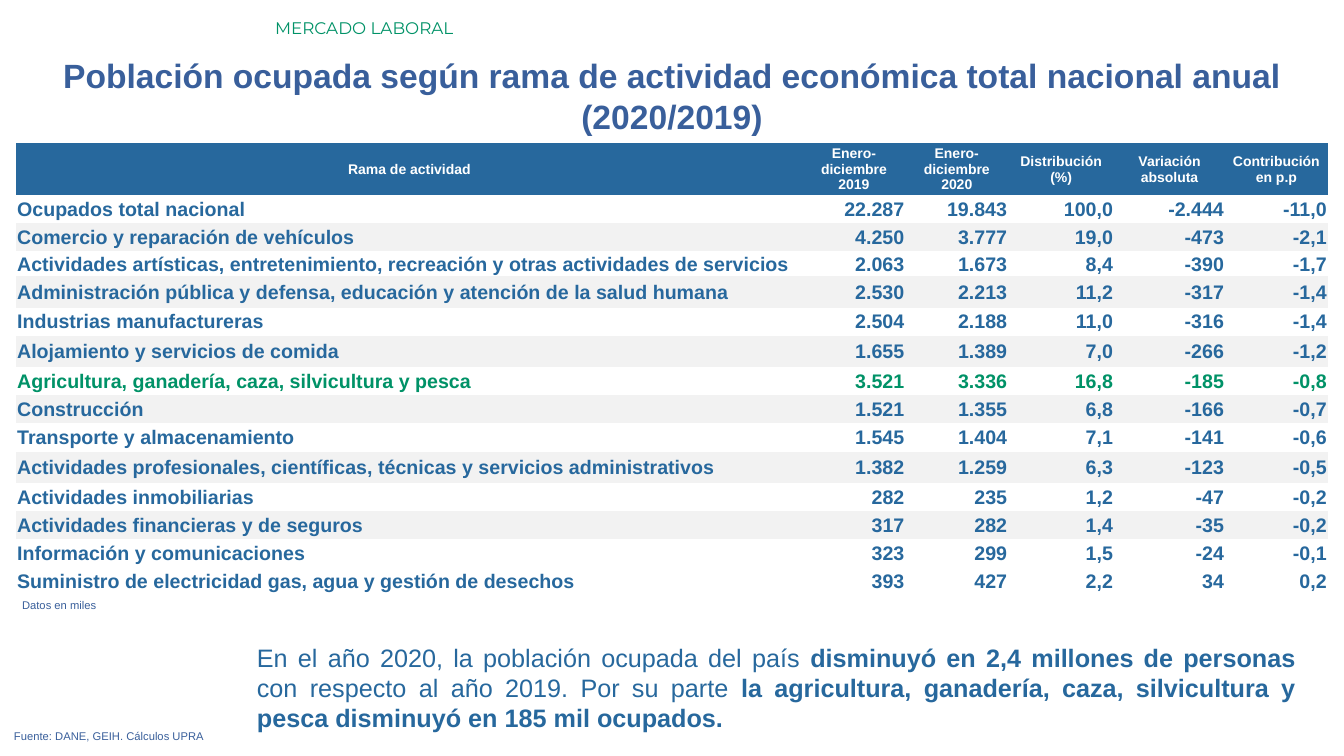
"""Build the slide on employed population by branch of economic activity."""
from dataclasses import dataclass

from pptx import Presentation
from pptx.dml.color import RGBColor
from pptx.enum.text import MSO_ANCHOR, MSO_AUTO_SIZE, PP_ALIGN
from pptx.oxml.ns import qn
from pptx.slide import Slide
from pptx.table import _Cell
from pptx.text.text import _Paragraph
from pptx.util import Emu, Pt

PX = 9144
BLUE = RGBColor(0x27, 0x68, 0x9D)
INDIGO = RGBColor(0x39, 0x5F, 0x9B)
GREEN = RGBColor(0x00, 0x92, 0x67)
GRAY = RGBColor(0xF2, 0xF2, 0xF2)
WHITE = RGBColor(0xFF, 0xFF, 0xFF)
NO_STYLE = "{2D5ABB26-0587-4C30-8999-92F81FD0307C}"


@dataclass(frozen=True)
class TextStyle:
    size: int
    color: RGBColor
    align: PP_ALIGN = PP_ALIGN.LEFT
    font: str = "Arial"
    bold: bool = False


@dataclass(frozen=True)
class TextBlock:
    left: int
    top: int
    width: int
    height: int
    style: TextStyle
    paragraphs: list[list[tuple[str, bool]]]


@dataclass(frozen=True)
class Branch:
    name: str
    figures: str
    height: int = 28
    color: RGBColor = BLUE


NOTE = TextStyle(8, INDIGO, PP_ALIGN.JUSTIFY)
TITLE = TextStyle(24, INDIGO, PP_ALIGN.CENTER, bold=True)
HEADER = TextStyle(10, WHITE, PP_ALIGN.CENTER, bold=True)

TEXT_BLOCKS = [
    TextBlock(263, 13, 1070, 30, TextStyle(12, GREEN, font="Montserrat"),
              [[("MERCADO LABORAL", False)]]),
    TextBlock(0, 50, 1333, 91, TITLE, [
        [("Población ocupada según rama de actividad económica total nacional anual", True)],
        [("(2020/2019)", True)],
    ]),
    TextBlock(245, 632, 1050, 101, TextStyle(18, BLUE, PP_ALIGN.JUSTIFY), [[
        ("En el año 2020, la población ocupada del país ", False),
        ("disminuyó en 2,4 millones de personas ", True),
        ("con respecto al año 2019. Por su parte ", False),
        ("la agricultura, ganadería, caza, silvicultura y pesca "
         "disminuyó en 185 mil ocupados.", True),
    ]]),
    TextBlock(4, 719, 1291, 24, NOTE, [[("Fuente: DANE, GEIH. Cálculos UPRA", False)]]),
    TextBlock(12, 589, 1291, 24, NOTE, [[("Datos en miles", False)]]),
]

HEADINGS = ["Rama de actividad", "Enero-diciembre\n2019", "Enero-diciembre\n2020",
            "Distribución\n(%)", "Variación\nabsoluta", "Contribución\nen p.p"]
COLUMN_WIDTHS = [780, 102, 102, 105, 110, 102]
HEADER_HEIGHT = 46
BRANCHES = [
    Branch("Ocupados total nacional", "22.287 19.843 100,0 -2.444 -11,0"),
    Branch("Comercio y reparación de vehículos", "4.250 3.777 19,0 -473 -2,1"),
    Branch("Actividades artísticas, entretenimiento, recreación y otras actividades de servicios",
           "2.063 1.673 8,4 -390 -1,7", 25),
    Branch("Administración pública y defensa, educación y atención de la salud humana",
           "2.530 2.213 11,2 -317 -1,4", 31),
    Branch("Industrias manufactureras", "2.504 2.188 11,0 -316 -1,4"),
    Branch("Alojamiento y servicios de comida", "1.655 1.389 7,0 -266 -1,2", 31),
    Branch("Agricultura, ganadería, caza, silvicultura y pesca",
           "3.521 3.336 16,8 -185 -0,8", color=GREEN),
    Branch("Construcción", "1.521 1.355 6,8 -166 -0,7"),
    Branch("Transporte y almacenamiento", "1.545 1.404 7,1 -141 -0,6"),
    Branch("Actividades profesionales, científicas, técnicas y servicios administrativos",
           "1.382 1.259 6,3 -123 -0,5", 31),
    Branch("Actividades inmobiliarias", "282 235 1,2 -47 -0,2"),
    Branch("Actividades financieras y de seguros", "317 282 1,4 -35 -0,2"),
    Branch("Información y comunicaciones", "323 299 1,5 -24 -0,1"),
    Branch("Suministro de electricidad gas, agua y gestión de desechos", "393 427 2,2 34 0,2"),
]


def px(length: int) -> Emu:
    return Emu(length * PX)


def apply_style(paragraph: _Paragraph, style: TextStyle) -> None:
    paragraph.alignment = style.align
    paragraph.font.name = style.font
    paragraph.font.size = Pt(style.size)
    paragraph.font.bold = style.bold
    paragraph.font.color.rgb = style.color


def add_text(slide: Slide, block: TextBlock) -> None:
    shape = slide.shapes.add_textbox(
        px(block.left), px(block.top), px(block.width), px(block.height))
    frame = shape.text_frame
    frame.word_wrap = True
    frame.auto_size = MSO_AUTO_SIZE.SHAPE_TO_FIT_TEXT
    for index, runs in enumerate(block.paragraphs):
        paragraph = frame.add_paragraph() if index else frame.paragraphs[0]
        apply_style(paragraph, block.style)
        for text, bold in runs:
            run = paragraph.add_run()
            run.text = text
            if bold != block.style.bold:
                run.font.bold = bold


def fill_cell(cell: _Cell, text: str, style: TextStyle, fill: RGBColor | None) -> None:
    cell.text = text
    cell.vertical_anchor = MSO_ANCHOR.MIDDLE
    cell.margin_left = cell.margin_right = cell.margin_top = px(1)
    cell.margin_bottom = 0
    if fill is None:
        cell.fill.background()
    else:
        cell.fill.solid()
        cell.fill.fore_color.rgb = fill
    for paragraph in cell.text_frame.paragraphs:
        apply_style(paragraph, style)


def add_branch_table(slide: Slide) -> None:
    heights = [HEADER_HEIGHT] + [branch.height for branch in BRANCHES]
    table = slide.shapes.add_table(
        len(heights), len(COLUMN_WIDTHS), px(16), px(142),
        px(sum(COLUMN_WIDTHS)), px(sum(heights))).table
    table.horz_banding = False
    table._tbl.tblPr.find(qn("a:tableStyleId")).text = NO_STYLE
    for column, width in zip(table.columns, COLUMN_WIDTHS):
        column.width = px(width)
    for row, height in zip(table.rows, heights):
        row.height = px(height)
    for column, heading in enumerate(HEADINGS):
        fill_cell(table.cell(0, column), heading, HEADER, BLUE)
    for row, branch in enumerate(BRANCHES, start=1):
        fill = GRAY if row % 2 == 0 and row < len(BRANCHES) else None
        for column, text in enumerate([branch.name, *branch.figures.split()]):
            align = PP_ALIGN.RIGHT if column else PP_ALIGN.LEFT
            style = TextStyle(14, branch.color, align, bold=True)
            fill_cell(table.cell(row, column), text, style, fill)


def main() -> None:
    presentation = Presentation()
    presentation.slide_width = px(1333)
    presentation.slide_height = px(750)
    slide = presentation.slides.add_slide(presentation.slide_layouts[6])
    for block in TEXT_BLOCKS[:-1]:
        add_text(slide, block)
    add_branch_table(slide)
    add_text(slide, TEXT_BLOCKS[-1])
    presentation.save("out.pptx")


if __name__ == "__main__":
    main()
